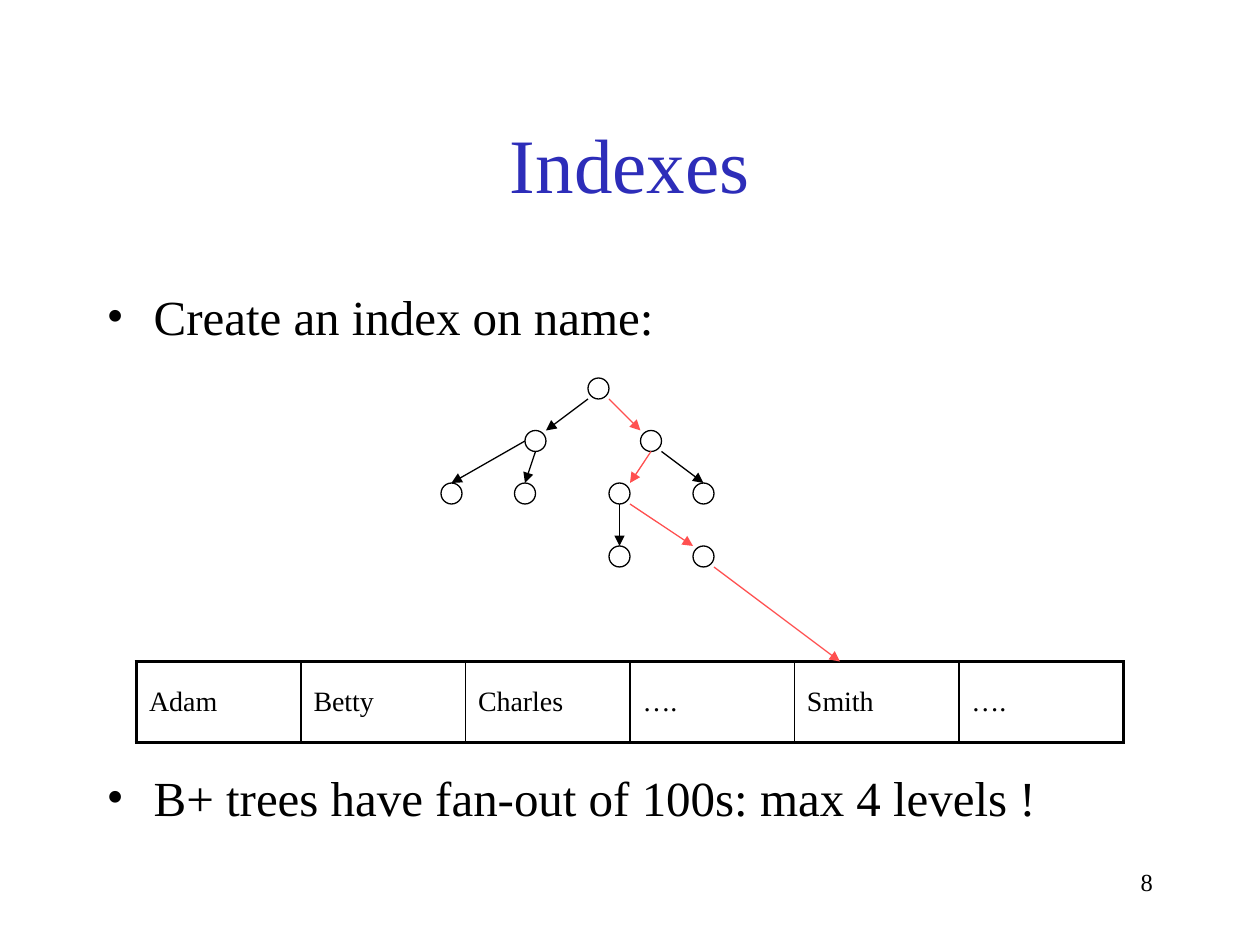
import pptx
import pptx.dml.color
import pptx.enum.shapes
import pptx.enum.text
import pptx.oxml
import pptx.oxml.ns
import pptx.util
from dataclasses import dataclass
from lxml import etree

Cm, Pt = pptx.util.Cm, pptx.util.Pt
Align = pptx.enum.text.PP_ALIGN
Anchor = pptx.enum.text.MSO_ANCHOR


@dataclass(frozen=True)
class Theme:
    font: str = "Times New Roman"
    ink: str = "000000"
    title: str = "2D2DB9"
    search: str = "FF5050"
    title_size: float = 44
    body_size: float = 28
    cell_size: float = 16
    number_size: float = 14
    thin: float = 0.75
    inner: float = 1
    outer: float = 2.25


THEME = Theme()
UNIT = Cm(2.54) // 12  # grid step of the tree
NODE_SIZE = 2
NODES = [(14, 0), (8, 5), (19, 5), (0, 10), (7, 10), (16, 10), (24, 10),
         (16, 16), (24, 16)]
# start, end, on the search path
EDGES = [((14, 2), (10, 5), False), ((16, 2), (19, 5), True),
         ((8, 6), (1, 10), False), ((9, 7), (8, 10), False),
         ((20, 7), (18, 10), True), ((21, 7), (25, 10), False),
         ((17, 12), (17, 16), False), ((18, 12), (24, 16), True),
         ((26, 18), (38, 27), True)]
BULLETS = ["Create an index on name:",
           "B+ trees have fan-out of 100s: max 4 levels !"]
NAMES = ["Adam", "Betty", "Charles", "….", "Smith", "…."]


def rgb(color):
    return pptx.dml.color.RGBColor.from_string(color)


def apply(target, values):
    for name, value in values.items():
        setattr(target, name, value)


def add_element(parent, tag, **attributes):
    element = etree.SubElement(parent, pptx.oxml.ns.qn(tag))
    for name, value in attributes.items():
        element.set(name, str(value))
    return element


def write(paragraph, text, size, color=THEME.ink, **formats):
    paragraph.text = text
    apply(paragraph, formats)
    apply(paragraph.font, {"name": THEME.font, "size": Pt(size)})
    paragraph.font.color.rgb = rgb(color)


def set_line(shape, color):
    shape.line.color.rgb = rgb(color)
    shape.line.width = Pt(THEME.thin)


def add_title(slide, box, text):
    title = slide.shapes.title
    apply(title, dict(zip(("left", "top", "width", "height"), box)))
    title.text_frame.vertical_anchor = Anchor.MIDDLE
    write(title.text_frame.paragraphs[0], text, THEME.title_size, THEME.title,
          alignment=Align.CENTER)


def add_bullets(slide, box, texts, gap):
    frame = slide.shapes.add_textbox(*box).text_frame
    apply(frame, {"word_wrap": True, "margin_top": Cm(0.27)})
    for index, text in enumerate(texts):
        paragraph = frame.add_paragraph() if index else frame.paragraphs[0]
        properties = paragraph._p.get_or_add_pPr()
        properties.set("marL", str(Cm(0.95)))
        properties.set("indent", str(-Cm(0.95)))
        add_element(properties, "a:buFont", typeface=THEME.font)
        add_element(properties, "a:buChar", char="•")
        write(paragraph, text, THEME.body_size,
              space_before=Pt(gap if index else 0))


def add_arrow(slide, start, end, color):
    arrow = slide.shapes.add_connector(
        pptx.enum.shapes.MSO_CONNECTOR.STRAIGHT, *start, *end)
    set_line(arrow, color)
    add_element(arrow.line._get_or_add_ln(), "a:tailEnd", type="triangle")
    add_element(arrow._element.spPr, "a:effectLst")


def add_tree(slide, left, top):
    def place(point):
        return left + point[0] * UNIT, top + point[1] * UNIT

    for point in NODES:
        node = slide.shapes.add_shape(
            pptx.enum.shapes.MSO_SHAPE.OVAL, *place(point),
            NODE_SIZE * UNIT, NODE_SIZE * UNIT)
        node.shadow.inherit = False
        node.fill.background()
        set_line(node, THEME.ink)
    for start, end, searched in EDGES:
        add_arrow(slide, place(start), place(end),
                  THEME.search if searched else THEME.ink)


def set_borders(cell, widths):
    properties = cell._tc.get_or_add_tcPr()
    for side, width in widths.items():
        line = add_element(properties, f"a:{side}", w=Pt(width))
        fill = add_element(line, "a:solidFill")
        add_element(fill, "a:srgbClr", val=THEME.ink)


def add_records(slide, box, names):
    table = slide.shapes.add_table(1, len(names), *box).table
    apply(table, {"first_row": False, "horz_banding": False})
    last = len(names) - 1
    for index, name in enumerate(names):
        table.columns[index].width = box[2] // len(names)
        cell = table.cell(0, index)
        cell.vertical_anchor = Anchor.MIDDLE
        write(cell.text_frame.paragraphs[0], name, THEME.cell_size)
        set_borders(cell, {
            "lnL": THEME.inner if index else THEME.outer,
            "lnR": THEME.inner if index < last else THEME.outer,
            "lnT": THEME.outer, "lnB": THEME.outer})
        cell.fill.background()


def add_number(slide, box, text):
    frame = slide.shapes.add_textbox(*box).text_frame
    frame.word_wrap = True
    write(frame.paragraphs[0], text, THEME.number_size, alignment=Align.RIGHT)


def main():
    presentation = pptx.Presentation()
    apply(presentation, {"slide_width": Cm(25.4), "slide_height": Cm(19.05)})
    slide = presentation.slides.add_slide(presentation.slide_layouts[5])

    # Slide number, title and bullets above and below the diagram
    add_number(slide, (Cm(18.2), Cm(17.36), Cm(5.29), Cm(1.27)), "8")
    add_bullets(slide, (Cm(1.9), Cm(5.5), Cm(22.23), Cm(11.43)), BULLETS, 241.5)
    add_title(slide, (Cm(1.9), Cm(1.69), Cm(21.59), Cm(3.18)), "Indexes")

    # Sorted records with the index tree over them
    add_records(slide, (Cm(2.75), Cm(13.34), Cm(19.9), Cm(1.63)), NAMES)
    add_tree(slide, Cm(8.89), Cm(7.62))
    presentation.save("out.pptx")


if __name__ == "__main__":
    main()
